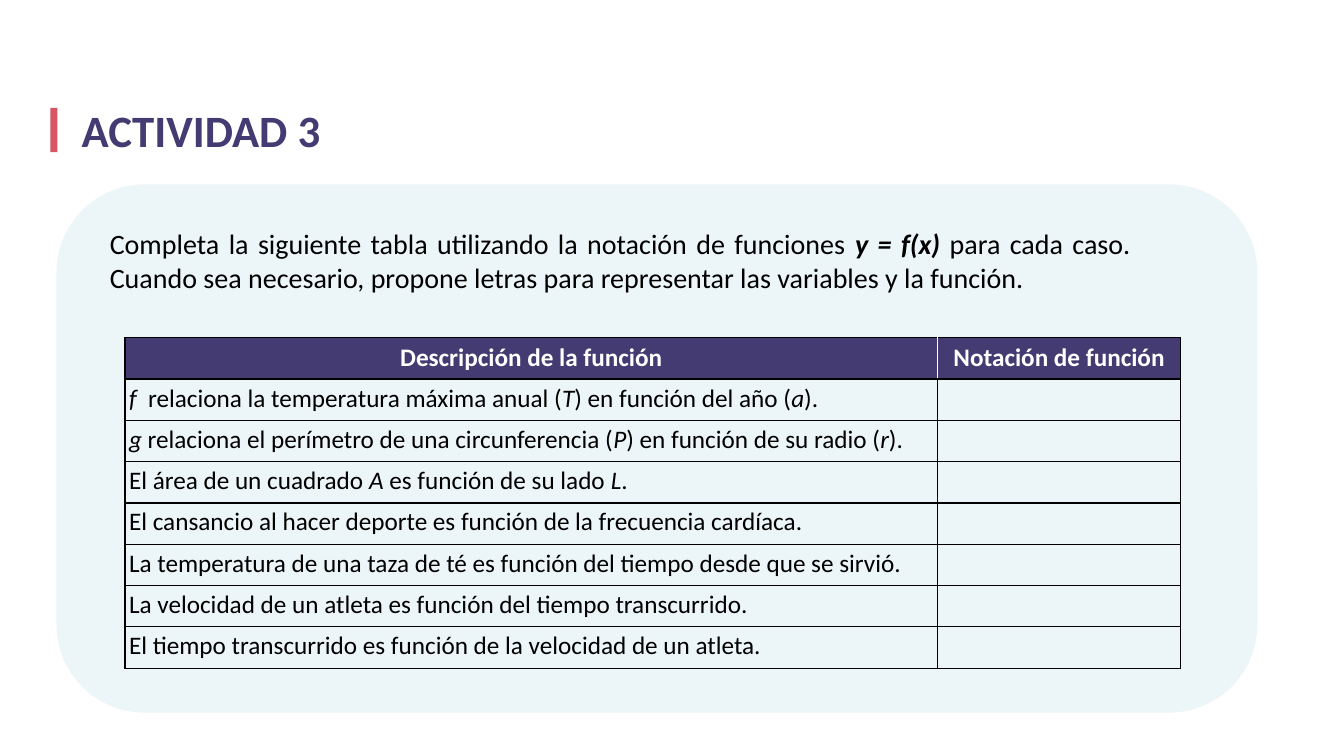
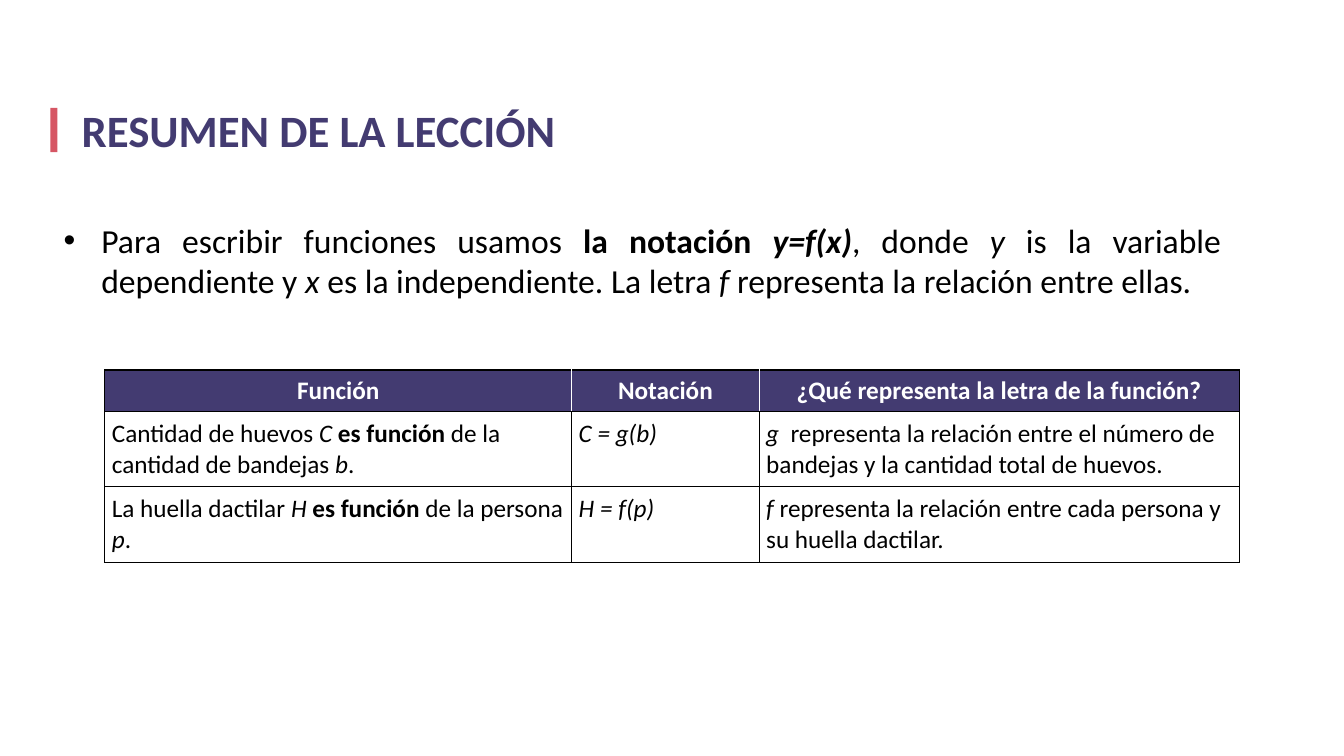
"""Build two lesson slides on function notation: an activity and a summary."""
from lxml.etree import SubElement
from pptx import Presentation
from pptx.dml.color import RGBColor
from pptx.enum.shapes import MSO_SHAPE
from pptx.enum.text import MSO_ANCHOR, MSO_AUTO_SIZE, PP_ALIGN
from pptx.oxml.ns import qn
from pptx.util import Emu, Pt

PX = 9144
FONT = "Calibri"
COLORS = {
    "purple": "433B71",
    "red": "D65664",
    "panel": "ECF5F7",
    "black": "000000",
    "white": "FFFFFF",
}


def px(*lengths):
    """Turn pixel lengths into EMU."""
    return [Emu(length * PX) for length in lengths]


def write(paragraph, marked, size, color="black", align=PP_ALIGN.LEFT, bold=None):
    """Fill a paragraph; *stars* mark bold and _underscores_ mark italic."""
    paragraph.alignment = align
    paragraph.space_before = Pt(0)
    paragraph.font.name = FONT
    paragraph.font.size = Pt(size)
    paragraph.font.bold = bold
    paragraph.font.color.rgb = RGBColor.from_string(COLORS[color])
    for b, strong in enumerate(marked.split("*")):
        for i, text in enumerate(strong.split("_")):
            if text:
                run = paragraph.add_run()
                run.text = text
                if b % 2:
                    run.font.bold = True
                if i % 2:
                    run.font.italic = True


deck = Presentation()
deck.slide_width, deck.slide_height = px(1333, 750)
activity = deck.slides.add_slide(deck.slide_layouts[5])
summary = deck.slides.add_slide(deck.slide_layouts[1])

panel = activity.shapes.add_shape(MSO_SHAPE.ROUNDED_RECTANGLE, *px(56, 183, 1191, 524))
instruction = activity.shapes.add_textbox(*px(99, 220, 1032, 77))
instruction.text_frame.word_wrap = True
write(
    instruction.text_frame.paragraphs[0],
    "Completa la siguiente tabla utilizando la notación de funciones *_y = f(x) _*"
    "para cada caso. Cuando sea necesario, propone letras para representar las "
    "variables y la función.",
    20,
    align=PP_ALIGN.JUSTIFY,
)

takeaway = summary.placeholders[1]
takeaway.left, takeaway.top, takeaway.width, takeaway.height = px(53, 213, 1168, 91)
takeaway.text_frame.auto_size = MSO_AUTO_SIZE.NONE
write(
    takeaway.text_frame.paragraphs[0],
    "Para escribir funciones usamos *la notación _y=f(x)_*, donde _y_ is la variable "
    "dependiente y _x _es la independiente. La letra _f _representa la relación "
    "entre ellas.",
    24,
    align=PP_ALIGN.JUSTIFY,
)

filled = [(panel, "panel")]
for slide, heading in ((activity, "ACTIVIDAD 3"), (summary, "RESUMEN DE LA LECCIÓN")):
    title = slide.shapes.title
    title.left, title.top, title.width, title.height = px(71, 97, 1100, 64)
    title.text_frame.auto_size = MSO_AUTO_SIZE.NONE
    write(title.text_frame.paragraphs[0], heading, 32, "purple", bold=True)
    accent = slide.shapes.add_shape(MSO_SHAPE.RECTANGLE, *px(50, 107, 7, 44))
    filled.append((accent, "red"))

for shape, color in filled:
    shape.fill.solid()
    shape.fill.fore_color.rgb = RGBColor.from_string(COLORS[color])
    shape.line.fill.background()
    shape.shadow.inherit = False

exercise_rows = [
    ["Descripción de la función", "Notación de función"],
    ["_f_  relaciona la temperatura máxima anual (_T_) en función del año (_a_).", ""],
    ["_g_ relaciona el perímetro de una circunferencia (_P_) en función de su radio (_r_).", ""],
    ["El área de un cuadrado _A_ es función de su lado _L_.", ""],
    ["El cansancio al hacer deporte es función de la frecuencia cardíaca.", ""],
    ["La temperatura de una taza de té es función del tiempo desde que se sirvió.", ""],
    ["La velocidad de un atleta es función del tiempo transcurrido.", ""],
    ["El tiempo transcurrido es función de la velocidad de un atleta.", ""],
]
example_rows = [
    ["Función", "Notación", "¿Qué representa la letra de la función?"],
    [
        "Cantidad de huevos _C _*es función *de la cantidad de bandejas _b_.",
        "_C = g(b)_",
        "_g_  representa la relación entre el número de bandejas y la cantidad total de huevos.",
    ],
    [
        "La huella dactilar _H _*es función *de la persona _p_.",
        "_H = f(p)_",
        "_f _representa la relación entre cada persona y su huella dactilar.",
    ],
]
tables = [
    (activity, exercise_rows, 124, 335, [806, 241], 41, 4, PP_ALIGN.JUSTIFY),
    (summary, example_rows, 104, 367, [463, 186, 476], 74, 7, PP_ALIGN.LEFT),
]
HEADER_HEIGHT = 41

for slide, rows, left, top, widths, row_height, inset, align in tables:
    height = HEADER_HEIGHT + row_height * (len(rows) - 1)
    frame = slide.shapes.add_table(
        len(rows), len(widths), *px(left, top, sum(widths), height)
    )
    grid = frame.table
    grid.first_row = grid.horz_banding = False
    for column, width in zip(grid.columns, px(*widths)):
        column.width = width
    for r, texts in enumerate(rows):
        header = r == 0
        grid.rows[r].height = px(HEADER_HEIGHT if header else row_height)[0]
        for c, text in enumerate(texts):
            cell = grid.cell(r, c)
            inner_sides = {"lnL": c > 0, "lnR": c < len(widths) - 1}
            properties = cell._tc.get_or_add_tcPr()
            for side in ("lnL", "lnR", "lnT", "lnB"):
                edge = SubElement(properties, qn(f"a:{side}"), w=str(Pt(1)))
                ink = "white" if header and inner_sides.get(side) else "black"
                fill = SubElement(edge, qn("a:solidFill"))
                SubElement(fill, qn("a:srgbClr"), val=COLORS[ink])
            paragraph = cell.text_frame.paragraphs[0]
            if header:
                cell.fill.solid()
                cell.fill.fore_color.rgb = RGBColor.from_string(COLORS["purple"])
                cell.vertical_anchor = MSO_ANCHOR.MIDDLE
                write(paragraph, text, 18, "white", PP_ALIGN.CENTER, bold=True)
            else:
                cell.fill.background()
                margin = px(inset)[0]
                cell.margin_left = cell.margin_right = margin
                cell.margin_top = cell.margin_bottom = margin
                write(paragraph, text, 18, align=align)

deck.save("out.pptx")
